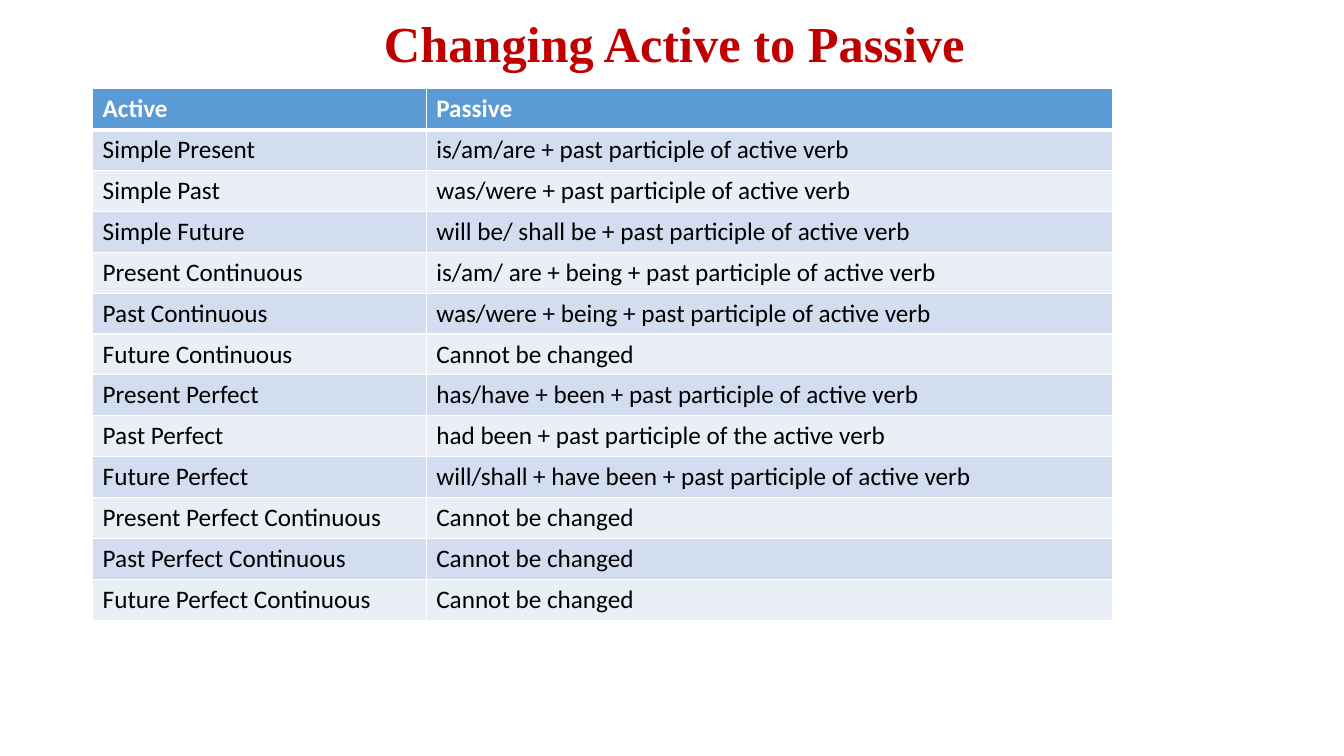
from lxml.etree import SubElement
from pptx import Presentation
from pptx.dml.color import RGBColor
from pptx.enum.text import MSO_ANCHOR, PP_ALIGN
from pptx.oxml.ns import qn
from pptx.util import Pt

COLORS = {
    "title": "C00000",
    "header": "5B9BD5",
    "odd_row": "D2DEEF",
    "even_row": "EAEFF7",
    "header_text": "FFFFFF",
    "text": "000000",
    "border": "FFFFFF",
}

UNCHANGED = "Cannot be changed"
TENSES = [
    ("Active", "Passive"),
    ("Simple Present", "is/am/are + past participle of active verb"),
    ("Simple Past", "was/were + past participle of active verb"),
    ("Simple Future", "will be/ shall be + past participle of active verb"),
    ("Present Continuous", "is/am/ are + being + past participle of active verb"),
    ("Past Continuous", "was/were + being + past participle of active verb"),
    ("Future Continuous", UNCHANGED),
    ("Present Perfect", "has/have + been + past participle of active verb"),
    ("Past Perfect", "had been + past participle of the active verb"),
    ("Future Perfect", "will/shall + have been + past participle of active verb"),
    ("Present Perfect Continuous", UNCHANGED),
    ("Past Perfect Continuous", UNCHANGED),
    ("Future Perfect Continuous", UNCHANGED),
]


def rgb(name):
    return RGBColor.from_string(COLORS[name])


def format_font(font, face, size, color, bold):
    font.name, font.size, font.bold = face, Pt(size), bold
    font.color.rgb = rgb(color)


def add_borders(cell, top, bottom):
    """Draw the four cell edges; side edges are 1 pt wide."""
    properties = cell._tc.get_or_add_tcPr()
    for edge, width in (("L", 1), ("R", 1), ("T", top), ("B", bottom)):
        line = SubElement(properties, qn(f"a:ln{edge}"), w=str(Pt(width)))
        fill = SubElement(line, qn("a:solidFill"))
        SubElement(fill, qn("a:srgbClr"), val=COLORS["border"])


def place_title(slide, left, top, width, height):
    title = slide.shapes.title
    title.left, title.top = Pt(left), Pt(top)
    title.width, title.height = Pt(width), Pt(height)
    frame = title.text_frame
    frame.text = "Changing Active to Passive"
    frame.vertical_anchor = MSO_ANCHOR.MIDDLE
    heading = frame.paragraphs[0]
    heading.alignment = PP_ALIGN.CENTER
    heading.line_spacing = 0.9
    format_font(heading.runs[0].font, "Times New Roman", 36, "title", True)


def add_tense_table(slide, left, top, width, height):
    tenses = slide.shapes.add_table(
        len(TENSES), 2, Pt(left), Pt(top), Pt(width), Pt(height)).table
    active_width = 238.3
    tenses.columns[0].width = Pt(active_width)
    tenses.columns[1].width = Pt(width - active_width)

    for r, forms in enumerate(TENSES):
        is_header = r == 0
        band = "header" if is_header else "odd_row" if r % 2 else "even_row"
        for c, form in enumerate(forms):
            cell = tenses.cell(r, c)
            # A thick rule separates the header from the body
            add_borders(cell, top=3 if r == 1 else 1, bottom=3 if is_header else 1)
            cell.fill.solid()
            cell.fill.fore_color.rgb = rgb(band)
            cell.text_frame.text = form
            format_font(cell.text_frame.paragraphs[0].runs[0].font, "Calibri", 18,
                        "header_text" if is_header else "text", is_header)


def main():
    prs = Presentation()
    prs.slide_width, prs.slide_height = Pt(960), Pt(540)
    slide = prs.slides.add_slide(prs.slide_layouts[5])  # title only
    place_title(slide, 67.7, 0, 828, 66.2)
    add_tense_table(slide, 66.2, 63.4, 728.6, 379.6)
    prs.save("out.pptx")


if __name__ == "__main__":
    main()
